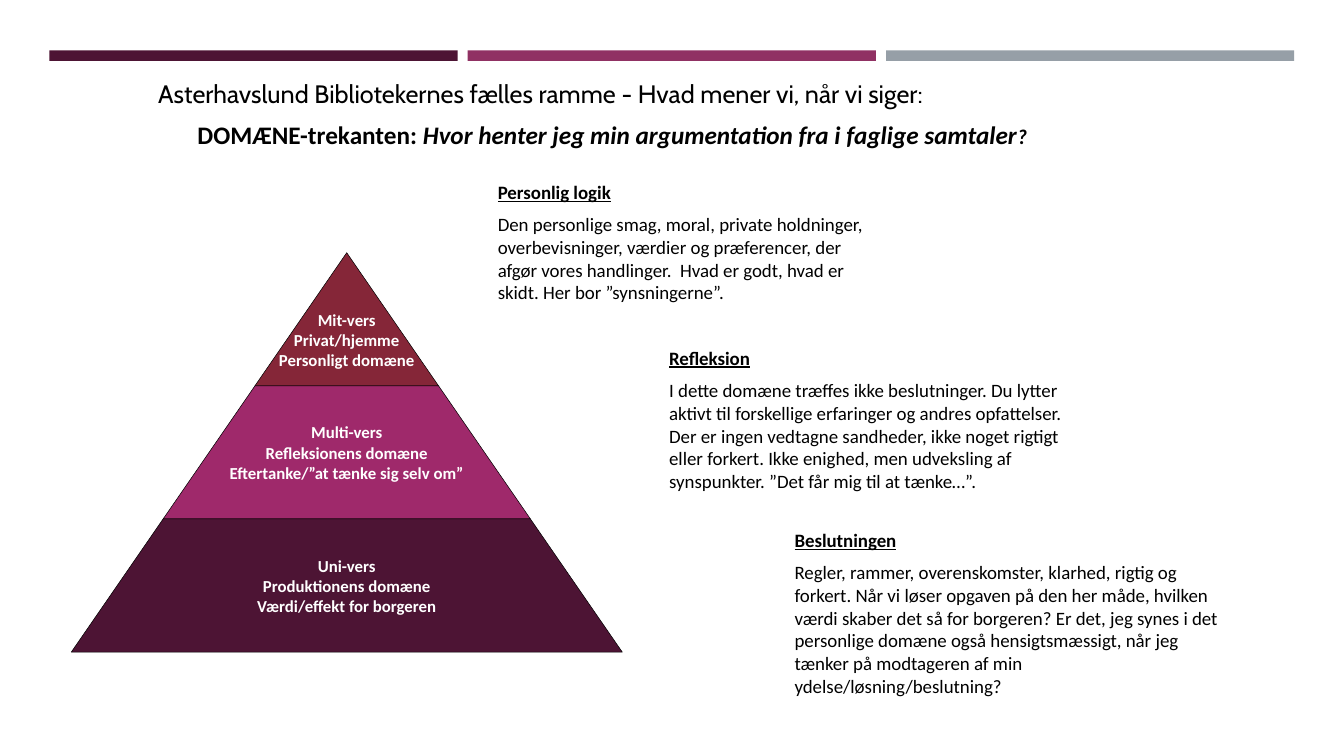
from pptx import Presentation
from pptx.dml.color import RGBColor
from pptx.enum.shapes import MSO_SHAPE
from pptx.enum.text import MSO_ANCHOR, MSO_AUTO_SIZE, PP_ALIGN
from pptx.util import Pt

HUES = {
    "plum": "4D1434", "mauve": "903163", "grey": "969FA7",
    "red": "852638", "pink": "9F296B", "ink": "000000", "white": "FFFFFF",
}
BARS = ["plum", "mauve", "grey"]
TIERS = [
    ("red", 29, "Mit-vers\nPrivat/hjemme\nPersonligt domæne"),
    ("pink", 0, "Multi-vers\nRefleksionens domæne\nEftertanke/”at tænke sig selv om”"),
    ("plum", 0, "Uni-vers\nProduktionens domæne\nVærdi/effekt for borgeren"),
]
NOTES = [
    (348.5, 125.6, 287.3, 97.2, "Personlig logik",
     "Den personlige smag, moral, private holdninger, overbevisninger, værdier og "
     "præferencer, der afgør vores handlinger.  Hvad er godt, hvad er skidt. "
     "Her bor ”synsningerne”."),
    (470.9, 244.1, 313.2, 113.8, "Refleksion",
     "I dette domæne træffes ikke beslutninger. Du lytter aktivt til forskellige "
     "erfaringer og andres opfattelser. Der er ingen vedtagne sandheder, ikke noget "
     "rigtigt eller forkert. Ikke enighed, men udveksling af synspunkter. "
     "”Det får mig til at tænke…”."),
    (560.5, 374.2, 316.8, 129.6, "Beslutningen",
     "Regler, rammer, overenskomster, klarhed, rigtig og forkert. Når vi løser opgaven "
     "på den her måde, hvilken værdi skaber det så for borgeren? Er det, jeg synes i det "
     "personlige domæne også hensigtsmæssigt, når jeg tænker på modtageren af min "
     "ydelse/løsning/beslutning?"),
]
LEAD = [
    ("DOMÆNE-trekanten: ", 18, False),
    ("Hvor henter jeg min argumentation fra i faglige samtaler", 18, True),
    ("?", 15, True),
]


class Sheet:
    """Holds the style and the current slide, and draws each kind of element."""

    def __init__(self, deck):
        self.face = "Calibri"
        self.slide = deck.slides.add_slide(deck.slide_layouts[5])
        self.shapes = self.slide.shapes

    def tint(self, name):
        return RGBColor.from_string(HUES[name])

    def style(self, run, size, hue="ink", bold=False, face=None):
        font = run.font
        font.name = face or self.face
        font.size = Pt(size)
        font.bold = bold
        font.color.rgb = self.tint(hue)
        return font

    def paint(self, shape, hue):
        shape.shadow.inherit = False
        shape.fill.solid()
        shape.fill.fore_color.rgb = self.tint(hue)

    def bar(self, x, y, w, h, hue):
        shape = self.shapes.add_shape(MSO_SHAPE.RECTANGLE, Pt(x), Pt(y), Pt(w), Pt(h))
        self.paint(shape, hue)
        shape.line.fill.background()

    def title(self, x, y, w, h, text):
        shape = self.shapes.title
        shape.left, shape.top, shape.width, shape.height = Pt(x), Pt(y), Pt(w), Pt(h)
        frame = shape.text_frame
        frame.text = text
        frame.auto_size = MSO_AUTO_SIZE.NONE
        frame.vertical_anchor = MSO_ANCHOR.TOP
        para = frame.paragraphs[0]
        para.alignment = PP_ALIGN.LEFT
        self.style(para.runs[0], 18, face="Cabin")

    def box(self, x, y, w, h):
        frame = self.shapes.add_textbox(Pt(x), Pt(y), Pt(w), Pt(h)).text_frame
        frame.word_wrap = True
        return frame

    def lead(self, x, y, w, h, parts):
        para = self.box(x, y, w, h).paragraphs[0]
        for text, size, slant in parts:
            run = para.add_run()
            run.text = text
            self.style(run, size, bold=True).italic = slant

    def note(self, x, y, w, h, head, body):
        frame = self.box(x, y, w, h)
        frame.text = f"{head}\n{body}"
        top, rest = frame.paragraphs
        self.style(top.runs[0], 13.5, bold=True).underline = True
        self.style(rest.runs[0], 13.5)
        rest.space_before = Pt(6.75)

    def tier(self, mid, y, h, near, far, hue, drop, text):
        pen = self.shapes.build_freeform(Pt(mid - far), Pt(y + h))
        ends = [(mid - near, y), (mid + near, y), (mid + far, y + h)]
        pen.add_line_segments([(Pt(a), Pt(b)) for a, b in ends], close=True)
        shape = pen.convert_to_shape()
        self.paint(shape, hue)
        shape.line.color.rgb = self.tint("ink")
        shape.line.width = Pt(0.37)
        frame = shape.text_frame
        frame.text = text
        frame.word_wrap = False
        frame.vertical_anchor = MSO_ANCHOR.MIDDLE
        frame.margin_left = frame.margin_right = frame.margin_bottom = 0
        frame.margin_top = Pt(drop)
        for para in frame.paragraphs:
            para.alignment = PP_ALIGN.CENTER
            self.style(para.runs[0], 12, "white", True)


def main():
    deck = Presentation()
    deck.slide_width, deck.slide_height = Pt(960), Pt(540)
    sheet = Sheet(deck)
    for k, hue in enumerate(BARS):
        sheet.bar(35.3 + k * 298.8, 36, 291.6, 7.5, hue)
    step, rise = 65.6, 95.1
    for k, (hue, drop, text) in enumerate(TIERS):
        sheet.tier(247.7, 180.5 + k * rise, rise, k * step, (k + 1) * step, hue, drop, text)
    for note in NOTES:
        sheet.note(*note)
    sheet.lead(133.9, 81.7, 730.8, 28.8, LEAD)
    sheet.title(105.8, 52.6, 730.8, 28.8,
                "Asterhavslund Bibliotekernes fælles ramme - Hvad mener vi, når vi siger:")
    deck.save("out.pptx")


if __name__ == "__main__":
    main()
